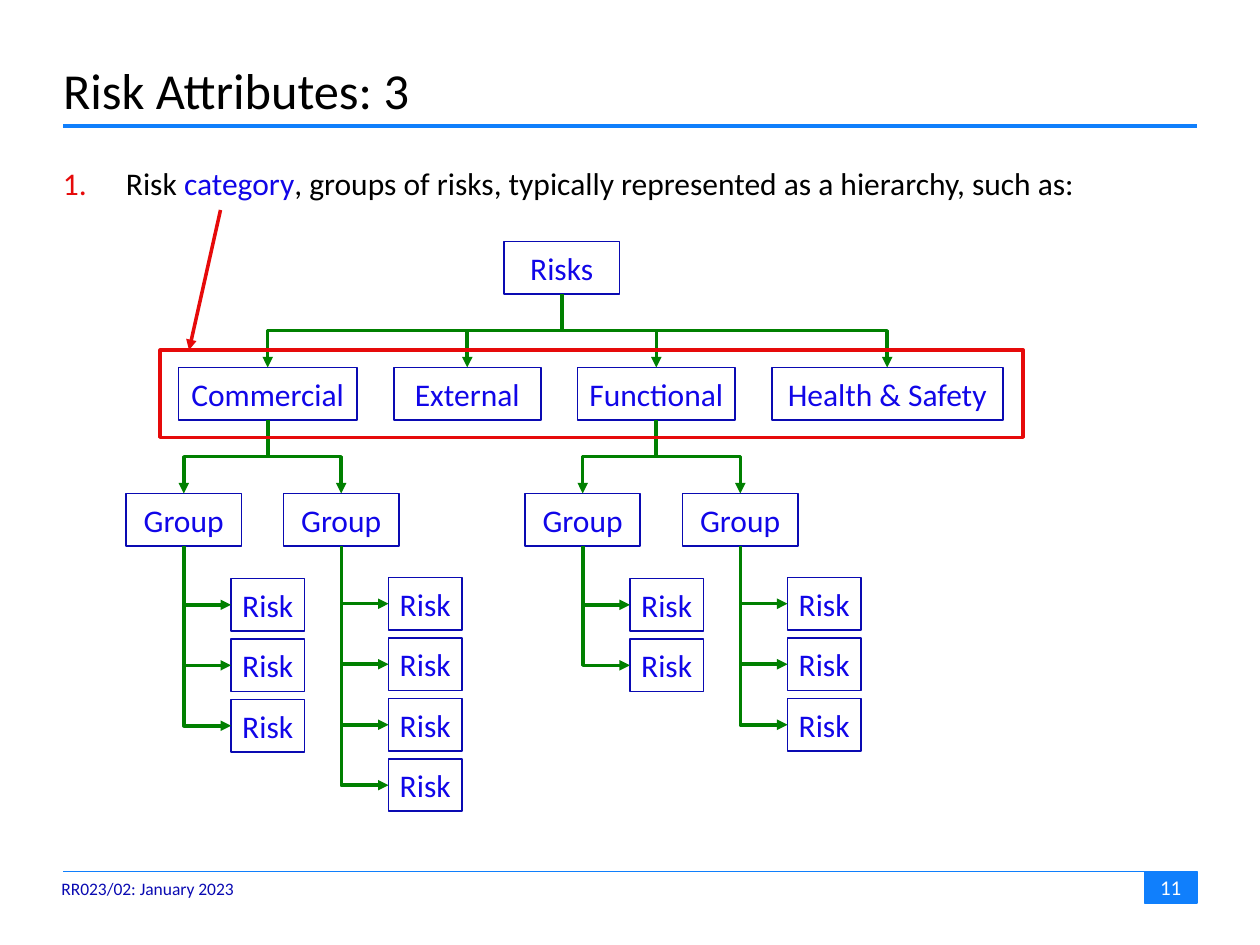
from lxml import etree
from pptx import Presentation
from pptx.dml.color import RGBColor
from pptx.enum.shapes import MSO_CONNECTOR, MSO_SHAPE
from pptx.enum.text import MSO_ANCHOR, MSO_AUTO_SIZE, PP_ALIGN
from pptx.oxml.ns import qn
from pptx.util import Inches, Pt

STRAIGHT, ELBOW = MSO_CONNECTOR.STRAIGHT, MSO_CONNECTOR.ELBOW
RECTANGLE = MSO_SHAPE.RECTANGLE
LEFT, CENTER = PP_ALIGN.LEFT, PP_ALIGN.CENTER
TOP, MIDDLE = MSO_ANCHOR.TOP, MSO_ANCHOR.MIDDLE
NO_RESIZE = MSO_AUTO_SIZE.NONE
SITE_TOP, SITE_LEFT, SITE_BOTTOM = 0, 1, 2

BLACK = RGBColor(0x00, 0x00, 0x00)
WHITE = RGBColor(0xFF, 0xFF, 0xFF)
AZURE = RGBColor(0x10, 0x7F, 0xFC)
NAVY = RGBColor(0x0A, 0x0A, 0xB2)
BLUE = RGBColor(0x11, 0x06, 0xE8)
GREEN = RGBColor(0x00, 0x80, 0x00)
RED = RGBColor(0xE6, 0x0A, 0x0A)

COLUMNS, ROWS = 120, 90
BOX_HEIGHT = 5
GROUP_WIDTH, RISK_WIDTH = 11, 7
RISK_INDENT, RISK_PITCH = 10, 5.76
CATEGORY_ROW, GROUP_ROW = 35, 47

CATEGORIES = [
    ("Commercial", 17, 17, [(12, 55.1, 3), (27, 55, 4)]),
    ("External", 37.5, 14, []),
    ("Functional", 55, 15, [(50, 55.1, 2), (65, 55, 3)]),
    ("Health & Safety", 73.5, 22, []),
]


class SlideBuilder:
    font = "Calibri"

    def __init__(self, presentation):
        self.column = presentation.slide_width / COLUMNS
        self.row = presentation.slide_height / ROWS
        self.slide = presentation.slides.add_slide(presentation.slide_layouts[5])

    def place(self, column, row, width, height):
        return (round(column * self.column), round(row * self.row),
                round(width * self.column), round(height * self.row))

    def fill_text(self, shape, runs, size, align=LEFT, anchor=MIDDLE, side=0.0, wrap=True):
        frame = shape.text_frame
        frame.auto_size = NO_RESIZE
        frame.word_wrap = wrap
        frame.vertical_anchor = anchor
        frame.margin_left = frame.margin_right = Inches(side)
        frame.margin_top = frame.margin_bottom = Inches(0.05)
        paragraph = frame.paragraphs[0]
        paragraph.alignment = align
        for text, color in runs:
            run = paragraph.add_run()
            run.text = text
            run.font.name = self.font
            run.font.size = Pt(size)
            run.font.color.rgb = color
        return paragraph

    def title(self, text, *area):
        title = self.slide.shapes.title
        title.left, title.top, title.width, title.height = self.place(*area)
        self.fill_text(title, [(text, BLACK)], 28.8)

    def text(self, runs, size, *area, **options):
        shape = self.slide.shapes.add_textbox(*self.place(*area))
        return self.fill_text(shape, runs, size, **options)

    def numbered(self, runs, *area):
        paragraph = self.text(runs, 18, *area, anchor=TOP)
        paragraph.space_before = paragraph.space_after = Pt(3)
        properties = paragraph._p.get_or_add_pPr()
        properties.set("marL", str(Inches(0.5)))
        properties.set("indent", str(-Inches(0.5)))
        color = etree.SubElement(properties, qn("a:buClr"))
        etree.SubElement(color, qn("a:srgbClr"), val=str(RED))
        etree.SubElement(properties, qn("a:buFont"), typeface=self.font)
        etree.SubElement(properties, qn("a:buAutoNum"), type="arabicPeriod")

    def rectangle(self, line, weight, fill, *area):
        shape = self.slide.shapes.add_shape(RECTANGLE, *self.place(*area))
        shape.shadow.inherit = False
        shape.line.color.rgb = line
        shape.line.width = Pt(weight)
        if fill is None:
            shape.fill.background()
        else:
            shape.fill.solid()
            shape.fill.fore_color.rgb = fill
        return shape

    def box(self, text, column, row, width):
        shape = self.rectangle(NAVY, 1, WHITE, column, row, width, BOX_HEIGHT)
        self.fill_text(shape, [(text, BLUE)], 18, align=CENTER, side=0.05)
        return shape

    def finish_line(self, connector, color, weight, arrow):
        connector.line.color.rgb = color
        connector.line.width = Pt(weight)
        properties = connector._element.spPr
        if arrow:
            etree.SubElement(properties.find(qn("a:ln")), qn("a:tailEnd"), type="triangle")
        etree.SubElement(properties, qn("a:effectLst"))

    def line(self, color, weight, start, end, arrow=False):
        ends = self.place(*start, *end)
        connector = self.slide.shapes.add_connector(STRAIGHT, *ends)
        self.finish_line(connector, color, weight, arrow)

    def branch(self, parent, child, site):
        start_x, start_y = parent.left + parent.width // 2, parent.top + parent.height
        if site == SITE_TOP:
            end_x, end_y = child.left + child.width // 2, child.top
        else:
            end_x, end_y = child.left, child.top + child.height // 2
        connector = self.slide.shapes.add_connector(ELBOW, start_x, start_y, end_x, end_y)
        connector.begin_connect(parent, SITE_BOTTOM)
        connector.end_connect(child, site)
        rise, reach = end_y - start_y, abs(end_x - start_x)
        connector.left = (start_x + end_x - rise) // 2
        connector.top = (start_y + end_y - reach) // 2
        connector.width, connector.height = rise, reach
        rightward = end_x > start_x
        properties = connector._element.spPr
        transform = properties.find(qn("a:xfrm"))
        transform.set("rot", str((270 if rightward else 90) * 60000))
        transform.set("flipH", str(int(rightward)))
        transform.set("flipV", "0")
        if site == SITE_LEFT:
            properties.find(qn("a:prstGeom")).set("prst", "bentConnector2")
        self.finish_line(connector, GREEN, 2, True)


def add_frame(builder):
    builder.line(AZURE, 2, (6, 12), (114, 12))
    builder.line(AZURE, 1, (6, 83), (114, 83))
    number = builder.rectangle(AZURE, 1, AZURE, 109, 83, 5, 3)
    builder.fill_text(number, [("11", WHITE)], 12, align=CENTER)
    builder.text([("RR023/02: January 2023", NAVY)], 10, 5.85, 83, 18, 3.2,
                 anchor=TOP, wrap=False)
    builder.title("Risk Attributes: 3", 6, 5, 108, 7)


def add_hierarchy(builder):
    root = builder.box("Risks", 48, 23, GROUP_WIDTH)
    for name, column, width, groups in CATEGORIES:
        category = builder.box(name, column, CATEGORY_ROW, width)
        builder.branch(root, category, SITE_TOP)
        for group_column, first_row, count in groups:
            group = builder.box("Group", group_column, GROUP_ROW, GROUP_WIDTH)
            builder.branch(category, group, SITE_TOP)
            for index in range(count):
                risk = builder.box("Risk", group_column + RISK_INDENT,
                                   first_row + index * RISK_PITCH, RISK_WIDTH)
                builder.branch(group, risk, SITE_LEFT)


def main():
    presentation = Presentation()
    presentation.slide_width, presentation.slide_height = Inches(10), Inches(7.5)
    builder = SlideBuilder(presentation)
    add_frame(builder)
    builder.numbered([
        ("Risk ", BLACK),
        ("category", BLUE),
        (", groups of risks, typically represented as a hierarchy, such as:", BLACK),
    ], 6, 15, 108, 65.4)
    add_hierarchy(builder)
    builder.rectangle(RED, 2, None, 15.25, 33.35, 82.2, 8.3)
    builder.line(RED, 2, (21, 20), (18, 33.35), arrow=True)
    presentation.save("out.pptx")


if __name__ == "__main__":
    main()
